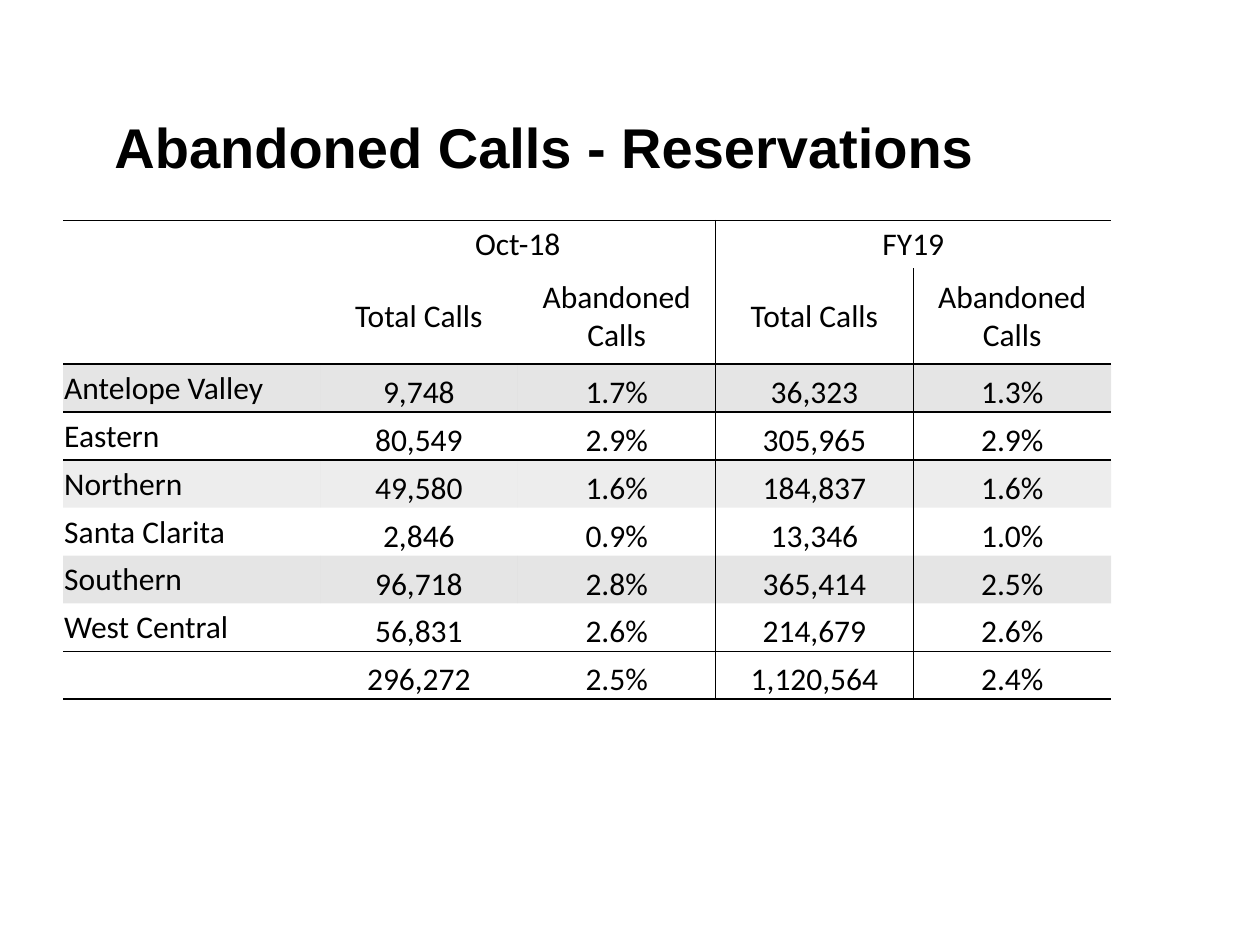
from dataclasses import dataclass
from typing import NamedTuple, Optional

from lxml.etree import SubElement
from pptx import Presentation
from pptx.dml.color import RGBColor as RGB
from pptx.enum.text import MSO_ANCHOR as Anchor, PP_ALIGN as Align
from pptx.oxml import parse_xml
from pptx.oxml.ns import nsdecls, qn
from pptx.util import Inches, Pt


@dataclass(frozen=True)
class Theme:
    ink: str = "000000"
    dark: str = "808080"
    light: str = "A6A6A6"
    alpha: int = 20
    head: str = "Arial"
    body: str = "Calibri"
    big: int = 32
    size: int = 18
    rule: float = 1


class Row(NamedTuple):
    texts: tuple[str, ...]
    tint: Optional[str] = None
    head: bool = False
    units: int = 1


T = Theme()
PLAIN = "{2D5ABB26-0587-4C30-8999-92F81FD0307C}"
UNIT, LABEL, VALUE = 0.38, 2.04, 1.57
PAD = {"margin_left": Inches(0.01), "margin_right": Inches(0.01),
       "margin_top": Inches(0.01), "margin_bottom": 0}
ROWS = [
    Row(("", "Oct-18", "", "FY19", ""), head=True),
    Row(("", *("Total Calls", "Abandoned Calls") * 2), head=True, units=2),
    Row(("Antelope Valley", "9,748", "1.7%", "36,323", "1.3%"), T.dark),
    Row(("Eastern", "80,549", "2.9%", "305,965", "2.9%")),
    Row(("Northern", "49,580", "1.6%", "184,837", "1.6%"), T.light),
    Row(("Santa Clarita", "2,846", "0.9%", "13,346", "1.0%")),
    Row(("Southern", "96,718", "2.8%", "365,414", "2.5%"), T.dark),
    Row(("West Central", "56,831", "2.6%", "214,679", "2.6%")),
    Row(("", "296,272", "2.5%", "1,120,564", "2.4%")),
]
RULES = {0, 2, 3, 8, 9}  # horizontal lines, by the row below each


def put(obj, **vals) -> None:
    for key, val in vals.items():
        setattr(obj, key, val)


def write(para, text: str, **font) -> None:
    run = para.add_run()
    run.text = text
    put(run.font, **font)
    run.font.color.rgb = RGB.from_string(T.ink)


def edge(cell, sides: str) -> None:
    """Rule the given sides, named in schema order: L, R, T, B."""
    props = cell._tc.get_or_add_tcPr()
    for i, side in enumerate(sides):
        props.insert(i, parse_xml(
            f'<a:ln{side} {nsdecls("a")} w="{Pt(T.rule)}"><a:solidFill>'
            f'<a:srgbClr val="{T.ink}"/></a:solidFill></a:ln{side}>'))


def shade(cell, tint: Optional[str]) -> None:
    if tint is None:
        cell.fill.background()
        return
    cell.fill.solid()
    cell.fill.fore_color.rgb = RGB.from_string(tint)
    color = cell._tc.tcPr.find(".//" + qn("a:srgbClr"))
    SubElement(color, qn("a:alpha"), val=str(T.alpha * 1000))


def sides(r: int, c: int) -> str:
    inner = r > 0  # the line inside FY19 starts below its heading
    tests = {"L": c == 3 or (c == 4 and inner),
             "R": c == 2 or (c == 3 and inner),
             "T": r in RULES, "B": r + 1 in RULES}
    return "".join(side for side, on in tests.items() if on)


def fill(cell, row: Row, r: int, c: int) -> None:
    mid = row.head or c == 0
    put(cell, **PAD, vertical_anchor=Anchor.MIDDLE if mid else Anchor.BOTTOM)
    shade(cell, row.tint)
    edge(cell, sides(r, c))
    if row.texts[c]:
        para = cell.text_frame.paragraphs[0]
        para.alignment = Align.CENTER if c else Align.LEFT
        write(para, row.texts[c], name=T.body, size=Pt(T.size), bold=False)


def title(slide) -> None:
    box = slide.shapes.add_textbox(
        Inches(0.81), Inches(0.84), Inches(8.39), Inches(0.64))
    frame = box.text_frame
    put(frame, word_wrap=True, vertical_anchor=Anchor.MIDDLE)
    write(frame.paragraphs[0], "Abandoned Calls - Reservations",
          name=T.head, size=Pt(T.big), bold=True)


def calls(slide) -> None:
    widths = [LABEL] + [VALUE] * 4
    high = UNIT * sum(row.units for row in ROWS)
    frame = slide.shapes.add_table(
        len(ROWS), len(widths), Inches(0.5), Inches(1.75),
        Inches(sum(widths)), Inches(high))
    table = frame.table
    put(table, first_row=False, horz_banding=False)
    table._tbl.tblPr.find(qn("a:tableStyleId")).text = PLAIN
    for col, wide in zip(table.columns, widths):
        col.width = Inches(wide)
    for c in (1, 3):
        table.cell(0, c).merge(table.cell(0, c + 1))
    for r, row in enumerate(ROWS):
        table.rows[r].height = Inches(UNIT * row.units)
        for c in range(len(widths)):
            fill(table.cell(r, c), row, r, c)
    # A merged heading takes its right line from its first cell.
    edge(table.cell(0, 1), "R")


def main() -> None:
    deck = Presentation()
    put(deck, slide_width=Inches(10), slide_height=Inches(7.5))
    slide = deck.slides.add_slide(deck.slide_layouts[6])
    title(slide)
    calls(slide)
    deck.save("out.pptx")


if __name__ == "__main__":
    main()
